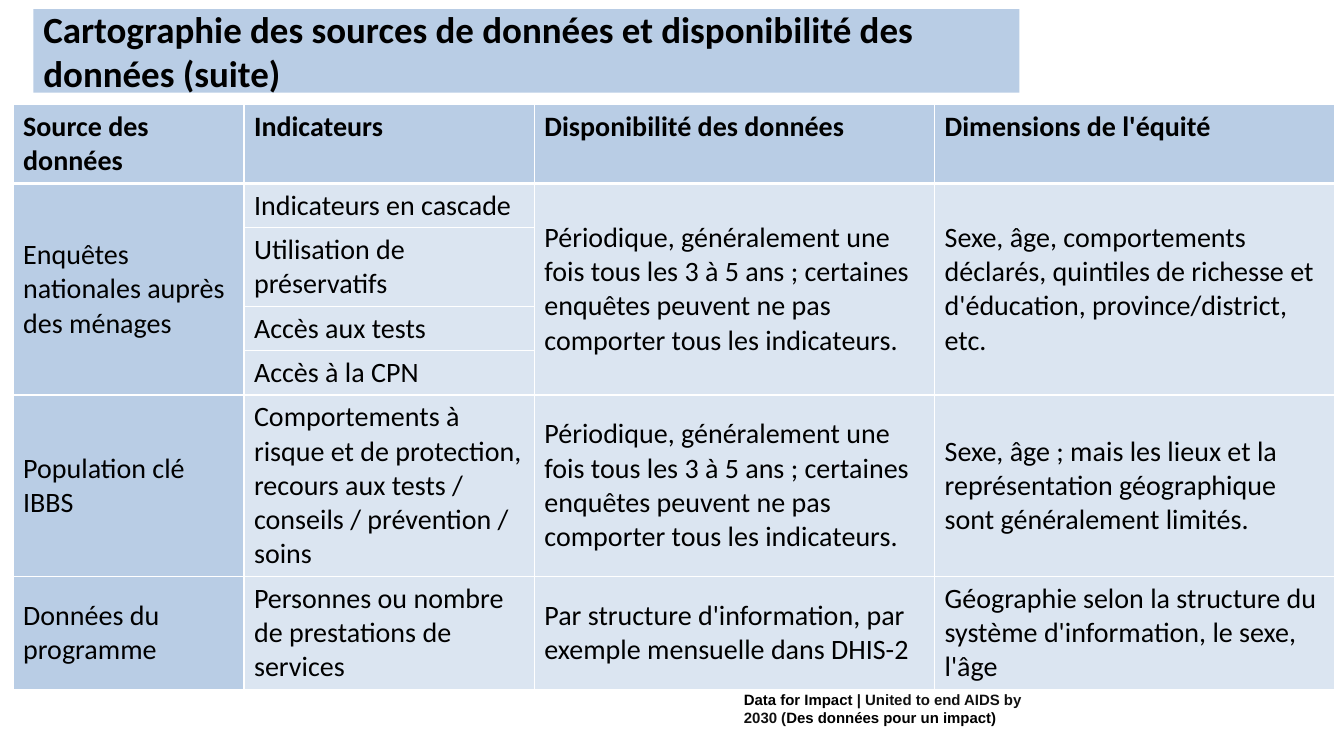
import pptx
import pptx.util
import pptx.dml.color
import pptx.enum.text
import pptx.oxml
import pptx.oxml.ns
from lxml import etree

Inches = pptx.util.Inches
ANCHOR = pptx.enum.text.MSO_ANCHOR
COLORS = {"blue": "B9CDE5", "black": "000000", "dark": "111111", "white": "FFFFFF"}
COLS = (2.29, 2.88, 3.97, 3.97)
LINES = (2, 1, 2, 1, 1, 5, 3)
PERIOD = ("Périodique, généralement une fois tous les 3 à 5 ans ; certaines "
          "enquêtes peuvent ne pas comporter tous les indicateurs.")
ROWS = (
    ("Source des données", "Indicateurs", "Disponibilité des données", "Dimensions de l'équité"),
    ("Enquêtes nationales auprès des ménages", "Indicateurs en cascade", PERIOD,
     "Sexe, âge, comportements déclarés, quintiles de richesse et d'éducation, "
     "province/district, etc."),
    (None, "Utilisation de préservatifs", None, None),
    (None, "Accès aux tests", None, None),
    (None, "Accès à la CPN", None, None),
    ("Population clé IBBS",
     "Comportements à risque et de protection, recours aux tests / conseils / prévention / soins",
     PERIOD,
     "Sexe, âge ; mais les lieux et la représentation géographique sont généralement limités."),
    ("Données du programme", "Personnes ou nombre de prestations de services",
     "Par structure d'information, par exemple mensuelle dans DHIS-2",
     "Géographie selon la structure du système d'information, le sexe, l'âge"),
)


def tint(name):
    """Return a named colour as an RGB value."""
    return pptx.dml.color.RGBColor.from_string(COLORS[name])


def style(font, color="black", **values):
    """Set the colour and the given values on a font."""
    for key, value in values.items():
        setattr(font, key, value)
    font.color.rgb = tint(color)


def place(shape, box):
    """Move a shape to a box given in inches."""
    for key, value in zip(("left", "top", "width", "height"), box):
        setattr(shape, key, Inches(value))


def edge(cell, head):
    """Draw white cell borders, with a thick one below the header."""
    props = cell._tc.get_or_add_tcPr()
    for side in "LRTB":
        width = 3 if head and side == "B" or head is None and side == "T" else 1
        line = etree.SubElement(props, pptx.oxml.ns.qn(f"a:ln{side}"), w=str(pptx.util.Pt(width)))
        fill = etree.SubElement(line, pptx.oxml.ns.qn("a:solidFill"))
        etree.SubElement(fill, pptx.oxml.ns.qn("a:srgbClr"), val=COLORS["white"])


def paint(cell, pale):
    """Fill a cell in blue, half transparent when pale."""
    cell.fill.solid()
    cell.fill.fore_color.rgb = tint("blue")
    if pale:
        tag = pptx.oxml.ns.qn("a:srgbClr")
        node = cell._tc.tcPr.find(pptx.oxml.ns.qn("a:solidFill")).find(tag)
        etree.SubElement(node, pptx.oxml.ns.qn("a:alpha"), val="50000")


def title(slide, box):
    """Place the title on its blue band."""
    shape = slide.shapes.title
    place(shape, box)
    shape.fill.solid()
    shape.fill.fore_color.rgb = tint("blue")
    frame = shape.text_frame
    frame.text = "Cartographie des sources de données et disponibilité des données (suite)"
    frame.word_wrap = True
    frame.auto_size = pptx.enum.text.MSO_AUTO_SIZE.NONE
    frame.vertical_anchor = ANCHOR.MIDDLE
    para = frame.paragraphs[0]
    para.alignment = pptx.enum.text.PP_ALIGN.LEFT
    style(para.runs[0].font, name="Calibri", size=pptx.util.Pt(26.4), bold=True)


def grid(slide, box):
    """Place the table of data sources."""
    size = [Inches(value) for value in box]
    table = slide.shapes.add_table(len(ROWS), len(COLS), *size).table
    table.horz_banding = False
    for col, width in zip(table.columns, COLS):
        col.width = Inches(width)
    for row, count in zip(table.rows, LINES):
        row.height = Inches(0.1 + 0.34 * count)
    for r, texts in enumerate(ROWS):
        for c, text in enumerate(texts):
            cell = table.cell(r, c)
            edge(cell, None if r == 1 else r == 0)
            paint(cell, r > 0 and c > 0)
            if r > 0 and c != 1:
                cell.vertical_anchor = ANCHOR.MIDDLE
            if text:
                cell.text = text
                font = cell.text_frame.paragraphs[0].runs[0].font
                style(font, name="Calibri", size=pptx.util.Pt(20), bold=r == 0)
    for c in (0, 2, 3):
        table.cell(1, c).merge(table.cell(4, c))


def foot(slide, box):
    """Place the footer line."""
    frame = slide.shapes.add_textbox(*[Inches(value) for value in box]).text_frame
    frame.word_wrap = True
    para = frame.paragraphs[0]
    for text, color in (("Data for Impact ", "black"),
                        ("| United to end AIDS by 2030 (", "dark"),
                        ("Des données pour un impact)", "black")):
        run = para.add_run()
        run.text = text
        style(run.font, color, name="Arial", size=pptx.util.Pt(10.7), bold=True)


def main():
    """Build and save the slide."""
    deck = pptx.Presentation()
    deck.slide_width, deck.slide_height = Inches(13.33), Inches(7.5)
    slide = deck.slides.add_slide(deck.slide_layouts[5])
    foot(slide, (7.28, 6.8, 3.06, 0.28))
    title(slide, (0.33, 0.09, 9.78, 0.83))
    grid(slide, (0.13, 1.04, 13.11, 5.7))
    deck.save("out.pptx")


if __name__ == "__main__":
    main()
